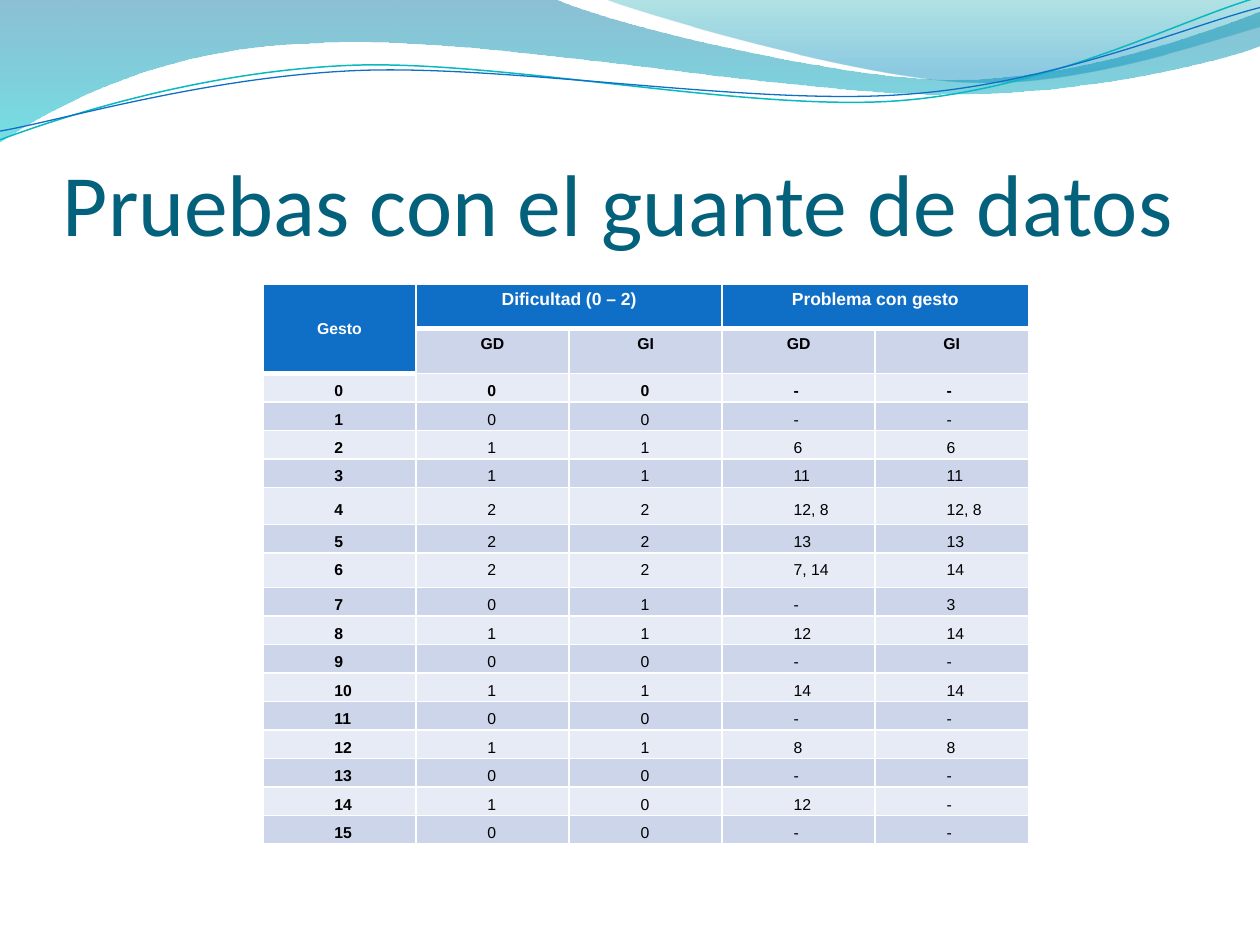
"""Build the slide with the data glove test results."""
from lxml.etree import SubElement as Sub
from pptx import Presentation
from pptx.dml.color import RGBColor
from pptx.enum.text import MSO_ANCHOR as Anchor, PP_ALIGN as Align
from pptx.oxml.ns import qn
from pptx.util import Pt

hue = RGBColor.from_string


def write(frame, text, size=9, font="Arial", color="000000", bold=False,
          align=Align.LEFT, left=0, space=None):
    par = frame.paragraphs[0]
    par.alignment = align
    par.line_spacing = space
    if left:
        par._p.get_or_add_pPr().set("marL", str(Pt(left)))
    run = par.add_run()
    run.text = text
    run.font.size = Pt(size)
    run.font.name = font
    run.font.bold = bold
    run.font.color.rgb = hue(color)


def draw(start, parts, close):
    pen = slide.shapes.build_freeform(Pt(start[0]), Pt(start[1]))
    dots = [part[i:i + 2] for part in parts for i in range(0, len(part), 2)]
    pen.add_line_segments([(Pt(x), Pt(y)) for x, y in dots], close=close)
    shape = pen.convert_to_shape()
    shape.shadow.inherit = False
    steps = iter(list(shape._element.iter(qn("a:lnTo"))))
    for part in parts:
        first = next(steps)
        if len(part) == 6:
            first.tag = qn("a:cubicBezTo")
            for _ in range(2):
                step = next(steps)
                first.append(step[0])
                step.getparent().remove(step)
    return shape


deck = Presentation()
deck.slide_width, deck.slide_height = Pt(720), Pt(540)
slide = deck.slides.add_slide(deck.slide_layouts[6])

waves = [
    ((0, 0), [(316.8, -0.7),
              (342.7, 12.2, 478.1, 45.4, 545.8, 45.4),
              (614.2, 45.4, 689.8, 18.7, 720, 6.5),
              (720.7, 25.9),
              (707.8, 31.7, 626.4, 54.7, 537.1, 54),
              (447.8, 54, 275, 20.2, 185, 24.5),
              (92.9, 25.9, 33.1, 59.8, -0.7, 81.4)],
     [(0, "0074A1", 45), (1, "00C6CF", 55)]),
    ((344.9, -0.7), [(366.5, 7.9, 491, 44.6, 553.7, 46.8),
                     (616.3, 49.7, 691.9, 23, 720, 15.1),
                     (720, 0)],
     [(0, "00A1A9", 30), (0.8, "008BBF", 45)]),
]
for start, parts, stops in waves:
    wave = draw(start, parts, True)
    wave.line.fill.background()
    wave.fill.gradient()
    wave.fill.gradient_angle = 270
    for stop, (place, color, _) in zip(wave.fill.gradient_stops, stops):
        stop.position = place
        stop.color.rgb = hue(color)
    for tint, stop in zip(wave._element.iter(qn("a:srgbClr")), stops):
        Sub(tint, qn("a:alpha"), val=str(stop[2] * 1000))

curves = [
    ((0, 79.9), [(34.6, 67, 113.8, 41, 199.4, 37.4),
                 (284.4, 33.8, 427, 64.1, 513.4, 57.6),
                 (599.8, 51.1, 675.4, 10.8, 718.6, -1.4)], "0AB8BF", 0.85),
    ((0, 74.9), [(33.8, 69.1, 118.1, 43.9, 203.8, 40.3),
                 (290.2, 36.7, 429.8, 60.5, 516.2, 54),
                 (601.9, 48.2, 677.5, 15.1, 720, 4.3)], "0F6FC6", 0.75),
]
for start, parts, color, width in curves:
    curve = draw(start, parts, False)
    curve.fill.background()
    curve.line.color.rgb = hue(color)
    curve.line.width = Pt(width)

title = slide.shapes.add_textbox(Pt(36), Pt(55.4), Pt(648), Pt(90)).text_frame
title.word_wrap = True
title.vertical_anchor = Anchor.BOTTOM
title.margin_left = title.margin_right = title.margin_bottom = 0
title.margin_top = Pt(3.6)
write(title, "Pruebas con el guante de datos", size=50, font="Calibri", color="04617B")

rows = [
    ["Gesto", "Dificultad (0 – 2)", "", "Problema con gesto", ""],
    ["", "GD", "GI", "GD", "GI"],
    ["0", "0", "0", "-", "-"],
    ["1", "0", "0", "-", "-"],
    ["2", "1", "1", "6", "6"],
    ["3", "1", "1", "11", "11"],
    ["4", "2", "2", "12, 8", "12, 8"],
    ["5", "2", "2", "13", "13"],
    ["6", "2", "2", "7, 14", "14"],
    ["7", "0", "1", "-", "3"],
    ["8", "1", "1", "12", "14"],
    ["9", "0", "0", "-", "-"],
    ["10", "1", "1", "14", "14"],
    ["11", "0", "0", "-", "-"],
    ["12", "1", "1", "8", "8"],
    ["13", "0", "0", "-", "-"],
    ["14", "1", "0", "12", "-"],
    ["15", "0", "0", "-", "-"],
]
tall = {0: 25.6, 1: 25.6, 6: 21.2, 8: 19.9}
high = [tall.get(r, 15.2) for r in range(len(rows))]
grid = slide.shapes.add_table(len(rows), 5, Pt(150.2), Pt(162.2),
                              Pt(437.5), Pt(sum(high))).table
grid.first_row = grid.horz_banding = False
for col in grid.columns:
    col.width = Pt(87.5)
for row, size in zip(grid.rows, high):
    row.height = Pt(size)
for a, b in [((0, 0), (1, 0)), ((0, 1), (0, 2)), ((0, 3), (0, 4))]:
    grid.cell(*a).merge(grid.cell(*b))

for r, row in enumerate(rows):
    for c, text in enumerate(row):
        cell = grid.cell(r, c)
        head = r == 0 or (r, c) == (1, 0)
        under = (r == 1 and c > 0) or (r, c) == (2, 0)
        props = cell._tc.get_or_add_tcPr()
        for side, width in zip("LRTB", (1, 1, 3 if under else 1, 3 if head else 1)):
            edge = Sub(props, qn(f"a:ln{side}"), w=str(Pt(width)))
            Sub(Sub(edge, qn("a:solidFill")), qn("a:srgbClr"), val="FFFFFF")
        cell.fill.solid()
        cell.fill.fore_color.rgb = hue("0F6FC6" if head else "CCD5EA" if r % 2 else "E7EBF5")
        if r > 1:
            cell.margin_left = cell.margin_right = Pt(4.9)
            cell.margin_top = cell.margin_bottom = 0
        if r == 6 or (r, c) == (0, 0):
            cell.vertical_anchor = Anchor.MIDDLE
        if cell.is_spanned:
            continue
        if r < 2:
            write(cell.text_frame, text, size=10 if head and c else 9, bold=True,
                  color="FFFFFF" if head else "000000", align=Align.CENTER)
        else:
            write(cell.text_frame, text, bold=c == 0 or r == 2, left=36, space=1.5)

deck.save("out.pptx")
